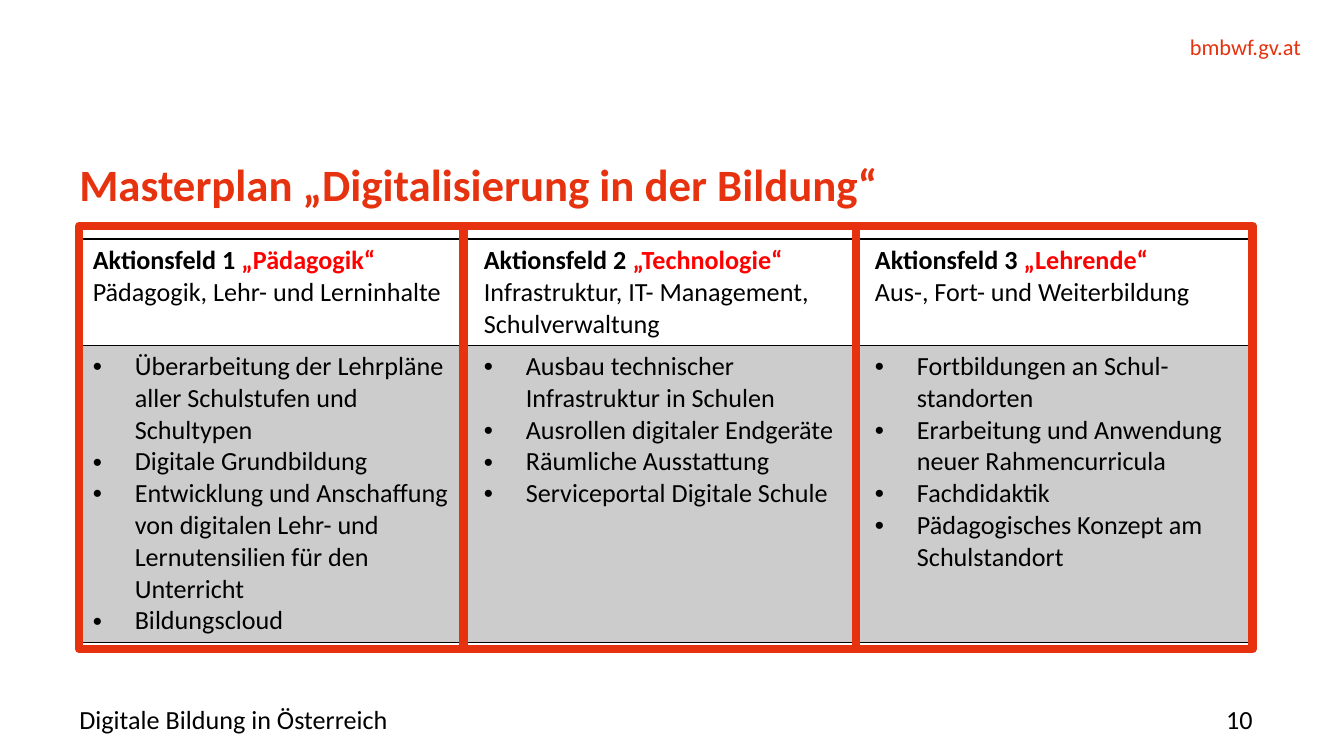
"""Build the slide on the three fields of action of the digital education plan."""
from lxml.etree import SubElement
from pptx import Presentation
from pptx.dml.color import RGBColor
from pptx.enum.shapes import MSO_SHAPE
from pptx.enum.text import MSO_ANCHOR, MSO_AUTO_SIZE, PP_ALIGN
from pptx.oxml import parse_xml
from pptx.oxml.ns import nsdecls, qn
from pptx.util import Inches, Pt

RED = RGBColor(0xE6, 0x32, 0x0F)
BRIGHT = RGBColor(0xFF, 0x00, 0x00)
BLACK = RGBColor(0x00, 0x00, 0x00)
FONT = "Calibri"
WIDTH = 10
HEIGHT = WIDTH * 9 / 16
LEFT, RIGHT = 0.59, 9.32
COL = (RIGHT - LEFT) / 3
ROWS = (0.79, 2.2)
TOP = 1.78
PAD = 0.1
INDENT = Pt(22.5)

FIELDS = [
    ("Aktionsfeld 1 ", "„Pädagogik“", "Pädagogik, Lehr- und Lerninhalte", [
        "Überarbeitung der Lehrpläne aller Schulstufen und Schultypen",
        "Digitale Grundbildung",
        "Entwicklung und Anschaffung von digitalen Lehr- und Lernutensilien für den Unterricht",
        "Bildungscloud"]),
    ("Aktionsfeld 2 ", "„Technologie“", "Infrastruktur, IT- Management,\nSchulverwaltung", [
        "Ausbau technischer Infrastruktur in Schulen",
        "Ausrollen digitaler Endgeräte",
        "Räumliche Ausstattung",
        "Serviceportal Digitale Schule"]),
    ("Aktionsfeld 3 ", "„Lehrende“", "Aus-, Fort- und Weiterbildung", [
        "Fortbildungen an Schul-standorten",
        "Erarbeitung und Anwendung neuer Rahmencurricula",
        "Fachdidaktik",
        "Pädagogisches Konzept am Schulstandort"]),
]


def write(para, text, size=14, color=BLACK, bold=False):
    for i, line in enumerate(text.split("\n")):
        if i:
            para.add_line_break()
        run = para.add_run()
        run.text = line
        font = run.font
        font.name, font.size, font.bold = FONT, Pt(size), bold
        font.color.rgb = color


def trim(frame, anchor):
    frame.margin_left = frame.margin_right = 0
    frame.margin_top = frame.margin_bottom = 0
    frame.vertical_anchor = anchor
    frame.auto_size = MSO_AUTO_SIZE.NONE


deck = Presentation()
deck.slide_width, deck.slide_height = Inches(WIDTH), Inches(HEIGHT)
slide = deck.slides.add_slide(deck.slide_layouts[5])
shapes = slide.shapes

title = shapes.title
title.left, title.top = Inches(LEFT), Inches(1.15)
title.width, title.height = Inches(RIGHT - LEFT), Inches(0.68)
trim(title.text_frame, MSO_ANCHOR.TOP)
title.text_frame.word_wrap = False
head = title.text_frame.paragraphs[0]
head.alignment = PP_ALIGN.LEFT
head.line_spacing = Pt(30)
write(head, "Masterplan „Digitalisierung in der Bildung“", 24, RED, True)

for text, x, y, wide, high, size, color, side, anchor in (
    ("bmbwf.gv.at", 7.27, 0.25, 2.41, 0.2, 12, RED, PP_ALIGN.RIGHT, MSO_ANCHOR.TOP),
    ("Digitale Bildung in Österreich", LEFT, 5.24, 7.52, 0.22, 14, BLACK, PP_ALIGN.LEFT, MSO_ANCHOR.MIDDLE),
    ("10", 8.27, 5.24, 1.05, 0.22, 14, BLACK, PP_ALIGN.RIGHT, MSO_ANCHOR.MIDDLE),
):
    box = shapes.add_textbox(Inches(x), Inches(y), Inches(wide), Inches(high))
    trim(box.text_frame, anchor)
    box.text_frame.word_wrap = True
    para = box.text_frame.paragraphs[0]
    para.alignment = side
    write(para, text, size, color)

grid = shapes.add_table(2, 3, Inches(LEFT), Inches(TOP), Inches(3 * COL), Inches(sum(ROWS))).table
grid.first_row = grid.horz_banding = False
grid._tbl.tblPr.find(qn("a:tableStyleId")).text = "{2D5ABB26-0587-4C30-8999-92F81FD0307C}"
for row, high in zip(grid.rows, ROWS):
    row.height = Inches(high)

for col, (name, theme, topic, points) in enumerate(FIELDS):
    grid.columns[col].width = Inches(COL)
    top, low = grid.cell(0, col), grid.cell(1, col)
    para = top.text_frame.paragraphs[0]
    write(para, name, bold=True)
    write(para, theme, color=BRIGHT, bold=True)
    write(top.text_frame.add_paragraph(), topic)
    top.fill.background()

    for i, point in enumerate(points):
        para = low.text_frame.add_paragraph() if i else low.text_frame.paragraphs[0]
        props = para._p.get_or_add_pPr()
        props.set("marL", str(INDENT))
        props.set("indent", str(-INDENT))
        SubElement(props, qn("a:buFont")).set("typeface", "Arial")
        SubElement(props, qn("a:buChar")).set("char", "•")
        write(para, point)
    low.fill.solid()
    low.fill.fore_color.rgb = BLACK
    tint = low._tc.tcPr.find(".//" + qn("a:srgbClr"))
    SubElement(tint, qn("a:alpha")).set("val", "20000")

    for cell in (top, low):
        cell.margin_left = cell.margin_right = Inches(PAD)
        cell.margin_top = cell.margin_bottom = Inches(0.04)
        for i, edge in enumerate(("lnT", "lnB")):
            cell._tc.tcPr.insert(i, parse_xml(
                f'<a:{edge} {nsdecls("a")} w="{Pt(1)}"><a:solidFill>'
                f'<a:srgbClr val="{BLACK}"/></a:solidFill></a:{edge}>'))

edges = (LEFT, 3.45, 6.37, RIGHT)
for x, end in zip(edges, edges[1:]):
    frame = shapes.add_shape(MSO_SHAPE.RECTANGLE, Inches(x), Inches(TOP - PAD),
                             Inches(end - x), Inches(3.15))
    frame.shadow.inherit = False
    frame.fill.background()
    frame.line.color.rgb = RED
    frame.line.width = Pt(4.5)
    SubElement(frame.line._ln, qn("a:round"))

deck.save("out.pptx")
